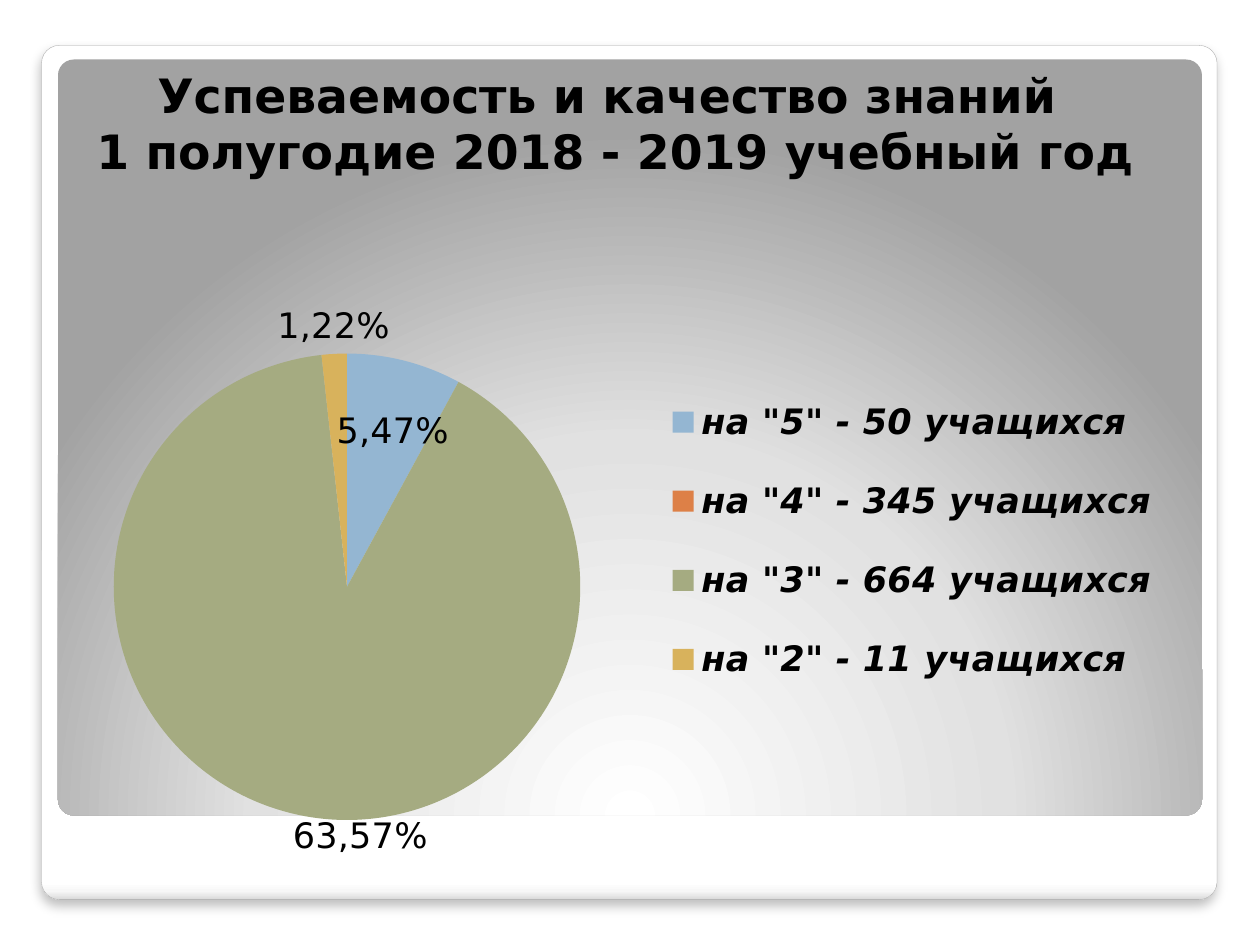
import pptx
import pptx.chart.data
import pptx.dml.color
import pptx.enum.chart
import pptx.enum.shapes
import pptx.enum.text
import pptx.oxml
import pptx.oxml.ns
import pptx.util

COLORS = {
    "text": "000000", "edge": "A4A4A4", "shadow": "000000",
    "five": "94B6D2", "four": "DD8047", "three": "A5AB81", "two": "D8B25C",
}
FRAME_STOPS = [(0, "FFFFFF"), (98, "FFFFFF"), (99, "F7F7F7"), (100, "DADADA")]
PANEL_STOPS = [(0, "FFFFFF"), (55, "E1E1E1"), (100, "A2A2A2")]
DOWNWARD = '<a:lin ang="5400000" scaled="0"/>'
FROM_BOTTOM = ('<a:path path="circle"><a:fillToRect l="50000" t="175000" '
               'r="50000" b="-75000"/></a:path>')
POSITION = pptx.enum.chart.XL_LABEL_POSITION
# category, values of both series, label, colour, label position, label shift (shares of the chart)
GRADES = [
    ('на "5" - 50 учащихся', (50, 0), "5,47%", "five", POSITION.INSIDE_END, (0.04, 0.06)),
    ('на "4" - 345 учащихся', (None, 98), None, "four", None, None),
    ('на "3" - 664 учащихся', (569, 2), "63,57%", "three", POSITION.OUTSIDE_END, (0.11, -0.01)),
    ('на "2" - 11 учащихся', (11, 0), "1,22%", "two", POSITION.OUTSIDE_END, None),
]


def element(tag, content="", attributes=""):
    spaces = pptx.oxml.ns.nsdecls("a", "c")
    return pptx.oxml.parse_xml(f"<{tag} {spaces} {attributes}>{content}</{tag}>")


def chart_layout(**values):
    """Manual layout of a chart part, in shares of the chart."""
    content = "".join(f'<c:{name} val="{value}"/>' for name, value in values.items())
    return element("c:layout", f"<c:manualLayout>{content}</c:manualLayout>")


def place_part(part, index, layout):
    for old in part.findall(pptx.oxml.ns.qn("c:layout")):
        part.remove(old)
    part.insert(index, layout)


class SlideBuilder:
    """Holds the style and the current slide; lengths are shares of the slide."""

    font_name = "DejaVu Sans"

    def __init__(self, deck):
        self.deck = deck
        self.page = deck.slides.add_slide(deck.slide_layouts[5])

    def area(self, left, top, width, height):
        across, down = self.deck.slide_width, self.deck.slide_height
        return [int(share * size) for share, size in
                zip((left, top, width, height), (across, down, across, down))]

    def style(self, font, size, bold=False, italic=False):
        font.name, font.size = self.font_name, pptx.util.Pt(size)
        font.bold, font.italic = bold, italic
        font.color.rgb = pptx.dml.color.RGBColor.from_string(COLORS["text"])

    def panel(self, area, stops, direction, framed=False):
        """Rounded rectangle with a gradient and, if framed, an edge and a shadow."""
        shape = self.page.shapes.add_shape(
            pptx.enum.shapes.MSO_SHAPE.ROUNDED_RECTANGLE, *self.area(*area))
        shape.adjustments[0] = 0.021
        shape.shadow.inherit = False
        marks = "".join(f'<a:gs pos="{share * 1000}"><a:srgbClr val="{color}"/></a:gs>'
                        for share, color in stops)
        properties = shape.element.spPr
        properties.find(pptx.oxml.ns.qn("a:prstGeom")).addnext(element(
            "a:gradFill", f"<a:gsLst>{marks}</a:gsLst>{direction}", 'rotWithShape="1"'))
        if not framed:
            shape.line.fill.background()
            return
        shape.line.color.rgb = pptx.dml.color.RGBColor.from_string(COLORS["edge"])
        shape.line.width = pptx.util.Pt(0.16)
        properties.find(pptx.oxml.ns.qn("a:effectLst")).append(element(
            "a:outerShdw",
            f'<a:srgbClr val="{COLORS["shadow"]}"><a:alpha val="25000"/></a:srgbClr>',
            f'blurRad="{pptx.util.Pt(6)}" dist="{pptx.util.Pt(4)}" dir="5400000"'))

    def title(self, area, text, size):
        box = self.page.shapes.title
        self.page.shapes.element.append(box.element)
        box.left, box.top, box.width, box.height = self.area(*area)
        frame = box.text_frame
        frame.text = text
        frame.word_wrap = True
        frame.auto_size = pptx.enum.text.MSO_AUTO_SIZE.NONE
        frame.vertical_anchor = pptx.enum.text.MSO_ANCHOR.TOP
        para = frame.paragraphs[0]
        para.alignment = pptx.enum.text.PP_ALIGN.CENTER
        para.space_before = pptx.util.Pt(4)
        for span in para.runs:
            self.style(span.font, size, bold=True)

    def pie(self, area, grades):
        data = pptx.chart.data.CategoryChartData()
        data.categories = [grade[0] for grade in grades]
        for number, values in enumerate(zip(*(grade[1] for grade in grades)), 1):
            data.add_series(f"Series {number}", values)
        chart = self.page.shapes.add_chart(
            pptx.enum.chart.XL_CHART_TYPE.PIE, *self.area(*area), data).chart
        # The pie template writes one series only; replacing the data adds the other.
        chart.replace_data(data)
        self.style(chart.font, 10, bold=True)
        chart.has_title = False
        chart.has_legend = True
        legend = chart.legend
        legend.position = pptx.enum.chart.XL_LEGEND_POSITION.RIGHT
        legend.include_in_layout = False
        self.style(legend.font, 20, bold=True, italic=True)
        place_part(legend._element, 1, chart_layout(
            xMode="edge", yMode="edge", x=0.5, y=0.235, w=0.47, h=0.5))
        place_part(chart._chartSpace.chart.plotArea, 0, chart_layout(
            layoutTarget="inner", xMode="edge", yMode="edge",
            x=0.047, y=0.177, w=0.402, h=0.746))
        plot = chart.plots[0]
        plot.vary_by_categories = True
        for series in plot.series:
            for point_index, grade in enumerate(grades):
                fill = series.points[point_index].format.fill
                fill.solid()
                fill.fore_color.rgb = pptx.dml.color.RGBColor.from_string(COLORS[grade[3]])
        self.pie_labels(plot.series[0], grades)

    def pie_labels(self, series, grades):
        series.data_labels.show_value = True
        self.style(series.data_labels.font, 20)
        for index, (_, _, text, _, position, shift) in enumerate(grades):
            if text is None:
                continue
            label = series.points[index].data_label
            label.text_frame.text = text
            self.style(label.text_frame.paragraphs[0].runs[0].font, 20)
            label.position = position
            if shift:
                place_part(label._get_or_add_dLbl(), 1, chart_layout(x=shift[0], y=shift[1]))


def main():
    deck = pptx.Presentation()
    deck.slide_width, deck.slide_height = pptx.util.Inches(10), pptx.util.Inches(7.5)
    builder = SlideBuilder(deck)
    builder.panel((0.033, 0.048, 0.933, 0.904), FRAME_STOPS, DOWNWARD, framed=True)
    builder.panel((0.046, 0.063, 0.908, 0.8), PANEL_STOPS, FROM_BOTTOM)
    builder.pie((0.047, 0.208, 0.921, 0.751), GRADES)
    builder.title((0.039, 0.063, 0.898, 0.135),
                  "Успеваемость и качество знаний \v1 полугодие 2018 - 2019 учебный год", 27)
    deck.save("out.pptx")


if __name__ == "__main__":
    main()
